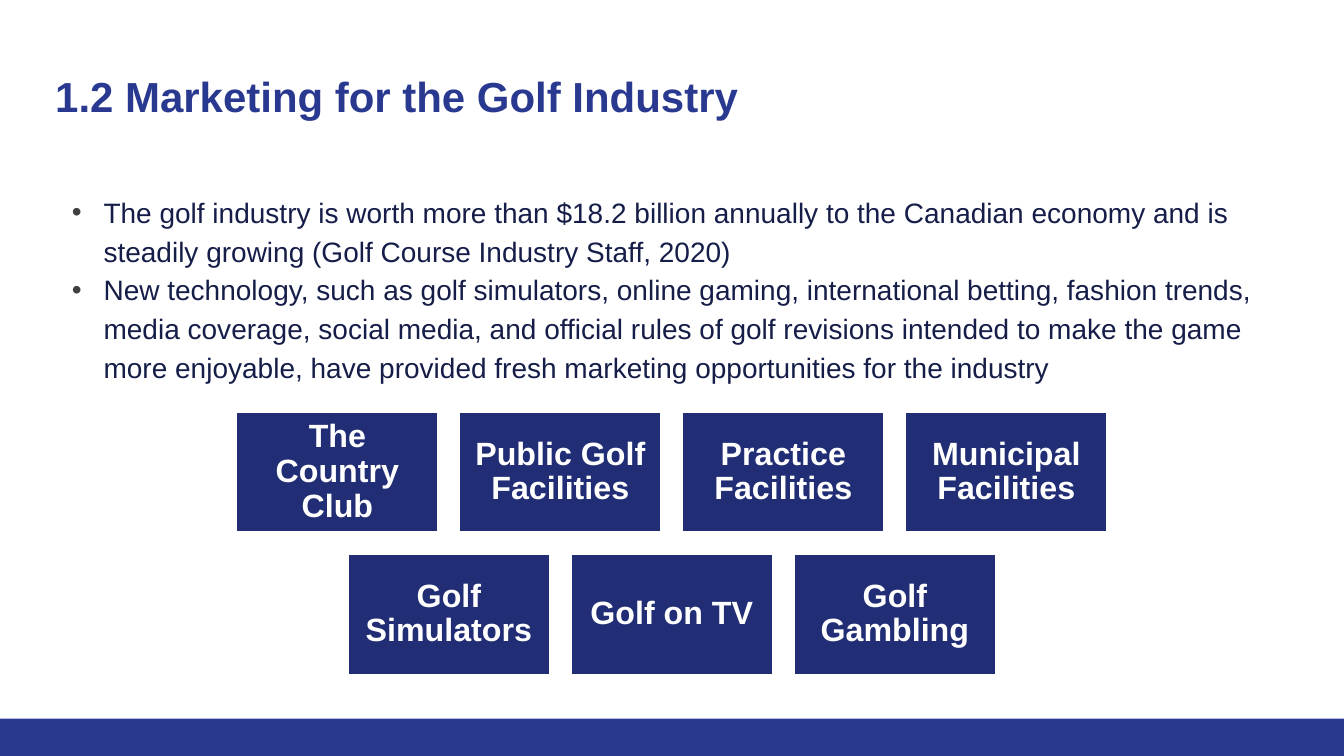
from lxml.etree import SubElement
from pptx import Presentation
from pptx.dml.color import RGBColor
from pptx.enum.shapes import MSO_SHAPE
from pptx.enum.text import MSO_ANCHOR, MSO_AUTO_SIZE, PP_ALIGN
from pptx.oxml.ns import qn
from pptx.util import Cm, Pt

SLIDE_WIDTH, SLIDE_HEIGHT = 33.87, 19.05
MARGIN, CONTENT_WIDTH = 1.14, 31.55
TILE_WIDTH, TILE_HEIGHT = 5.11, 3.07
TILE_PITCH, ROW_PITCH = 5.62, 3.58
TILES_TOP = 10.36

FACTS = [
    "The golf industry is worth more than $18.2 billion annually to the Canadian "
    "economy and is steadily growing (Golf Course Industry Staff, 2020)",
    "New technology, such as golf simulators, online gaming, international betting, "
    "fashion trends, media coverage, social media, and official rules of golf revisions "
    "intended to make the game more enjoyable, have provided fresh marketing "
    "opportunities for the industry",
]
SECTOR_ROWS = [
    ["The Country Club", "Public Golf Facilities", "Practice Facilities", "Municipal Facilities"],
    ["Golf Simulators", "Golf on TV", "Golf Gambling"],
]


def colour(hex_code):
    return RGBColor.from_string(hex_code)


class GolfSlide:
    FONT = "Arial"
    BLUE, NAVY, INK, WHITE, GREY = "2A3990", "212D74", "151D48", "FFFFFF", "404040"
    INSET = Cm(0.25)

    def __init__(self, deck):
        self.slide = deck.slides.add_slide(deck.slide_layouts[5])

    def prepare(self, frame, anchor):
        """Wrap the text, fix its size and set equal insets."""
        frame.word_wrap = True
        frame.auto_size = MSO_AUTO_SIZE.NONE
        frame.vertical_anchor = anchor
        frame.margin_left = frame.margin_right = self.INSET
        frame.margin_top = frame.margin_bottom = self.INSET

    def add_text(self, paragraph, text, size, ink, bold=False):
        run = paragraph.add_run()
        run.text = text
        run.font.name = self.FONT
        run.font.size = Pt(size)
        run.font.bold = bold
        run.font.color.rgb = colour(ink)

    def title(self, text, top, height):
        heading = self.slide.shapes.title
        heading.left, heading.top = Cm(MARGIN), Cm(top)
        heading.width, heading.height = Cm(CONTENT_WIDTH), Cm(height)
        self.prepare(heading.text_frame, MSO_ANCHOR.TOP)
        paragraph = heading.text_frame.paragraphs[0]
        paragraph.alignment = PP_ALIGN.LEFT
        self.add_text(paragraph, text, 30, self.BLUE, bold=True)

    def bullets(self, items, top, height):
        body = self.slide.shapes.add_textbox(
            Cm(MARGIN), Cm(top), Cm(CONTENT_WIDTH), Cm(height))
        self.prepare(body.text_frame, MSO_ANCHOR.TOP)
        for index, item in enumerate(items):
            paragraph = (body.text_frame.add_paragraph() if index
                         else body.text_frame.paragraphs[0])
            paragraph.line_spacing = 1.15
            properties = paragraph._p.get_or_add_pPr()
            properties.set("marL", str(Cm(1.22)))
            properties.set("indent", str(Cm(-0.8)))
            bullet_colour = SubElement(properties, qn("a:buClr"))
            SubElement(bullet_colour, qn("a:srgbClr"), val=self.GREY)
            SubElement(properties, qn("a:buFont"), typeface=self.FONT)
            SubElement(properties, qn("a:buChar"), char="•")
            self.add_text(paragraph, item, 20, self.INK)

    def rectangle(self, left, top, width, height, fill):
        box = self.slide.shapes.add_shape(
            MSO_SHAPE.RECTANGLE, Cm(left), Cm(top), Cm(width), Cm(height))
        box.shadow.inherit = False
        box.fill.solid()
        box.fill.fore_color.rgb = colour(fill)
        box.line.fill.background()
        return box

    def tile(self, text, left, top):
        box = self.rectangle(left, top, TILE_WIDTH, TILE_HEIGHT, self.NAVY)
        box.line.color.rgb = colour(self.WHITE)
        box.line.width = Pt(2)
        self.prepare(box.text_frame, MSO_ANCHOR.MIDDLE)
        paragraph = box.text_frame.paragraphs[0]
        paragraph.alignment = PP_ALIGN.CENTER
        paragraph.line_spacing = 0.9
        self.add_text(paragraph, text, 23, self.WHITE, bold=True)

    def centred_rows(self, rows, top):
        for row_index, labels in enumerate(rows):
            row_width = (len(labels) - 1) * TILE_PITCH + TILE_WIDTH
            first_left = (SLIDE_WIDTH - row_width) / 2
            for column, label in enumerate(labels):
                self.tile(label, first_left + column * TILE_PITCH,
                          top + row_index * ROW_PITCH)


def main():
    deck = Presentation()
    deck.slide_width, deck.slide_height = Cm(SLIDE_WIDTH), Cm(SLIDE_HEIGHT)
    golf = GolfSlide(deck)
    golf.rectangle(0, 18.11, SLIDE_WIDTH, 0.94, golf.BLUE)
    golf.title("1.2 Marketing for the Golf Industry", 1.52, 2.26)
    golf.bullets(FACTS, 4.55, 12.98)
    golf.centred_rows(SECTOR_ROWS, TILES_TOP)
    deck.save("out.pptx")


if __name__ == "__main__":
    main()
